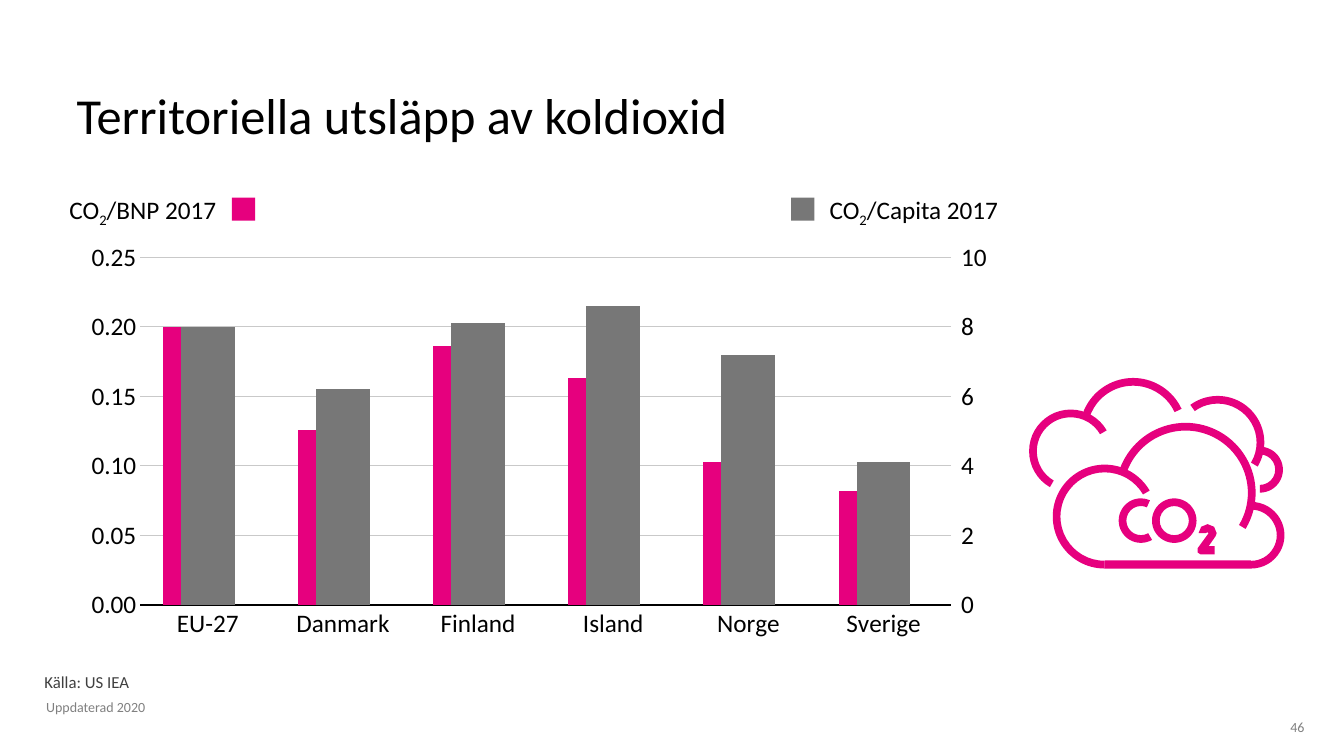
"""Build a slide on territorial carbon dioxide emissions in the Nordic countries."""
import copy

import pptx
import pptx.chart.axis
import pptx.chart.data
import pptx.dml.color
import pptx.enum.chart
import pptx.enum.shapes
import pptx.enum.text
import pptx.oxml
import pptx.oxml.ns
import pptx.util

Pt = pptx.util.Pt
qn = pptx.oxml.ns.qn
ALIGN = pptx.enum.text.PP_ALIGN
ANCHOR = pptx.enum.text.MSO_ANCHOR
SHAPE = pptx.enum.shapes.MSO_SHAPE
TICK = pptx.enum.chart.XL_TICK_MARK

THEME = {
    "font": "Calibri",
    "black": "000000", "dark": "404040", "muted": "808080",
    "pink": "E6007E", "gray": "777777", "grid": "C9C9C9",
    "title": 36, "label": 18, "source": 12, "small": 10,
}

TEXTS = [
    dict(at=(54.7, 26.6, 854.6, 77), runs=["Territoriella utsläpp av koldioxid"], size="title",
         shade="black", spacing=0.85, anchor=ANCHOR.BOTTOM, inset=(0, 0)),
    dict(at=(31.7, 479.5, 350, 16.6), runs=["Källa: US IEA"], size="source",
         shade="dark", anchor=ANCHOR.MIDDLE, inset=(0, 0)),
    dict(at=(903.6, 513.4, 28.1, 14.4), runs=["46"], size="small", shade="muted",
         spacing=1.0, align=ALIGN.RIGHT, inset=(0, 0)),
    dict(at=(42.5, 135.4, 162, 26.6), runs=["CO", "2", "/BNP 2017"], size="label", shade="black"),
    dict(at=(558, 135.4, 162, 26.6), runs=["CO", "2", "/Capita 2017"], size="label",
         shade="black", align=ALIGN.RIGHT),
    dict(at=(25.9, 496.8, 97.2, 18), runs=["Uppdaterad 2020"], size="small", shade="muted"),
]
LEGEND_KEYS = [((165.6, 141.1, 16.6, 16.6), "pink"), ((565.2, 141.1, 16.6, 16.6), "gray")]

CHART_AT = (31.7, 121, 877.7, 353.5)
PLOT_LAYOUT = {"x": 0.078, "y": 0.178, "w": 0.66, "h": 0.702}
COUNTRIES = ["EU-27", "Danmark", "Finland", "Island", "Norge", "Sverige"]
SERIES = [
    ("Series 1", [0.2, 0.126, 0.186, 0.163, 0.103, 0.082], "pink"),
    ("Series 2", [None] * 6, "gray"),
    ("Series 3", [8, 6.2, 8.1, 8.6, 7.2, 4.1], "gray"),
]

STROKE = 5.5
ANGLE_UNIT = 0.6
CLOUD_ARCS = [
    (815, 371.9, 15.9, 60, 294),
    (789.1, 369, 37.1, 90, 330),
    (846.9, 352.1, 50, 198, 31),
    (893.7, 382.3, 23.8, 270, 90),
    (869.8, 316.1, 33.3, 234, 31),
    (900, 335.5, 16.4, 270, 90),
    (764.8, 322.3, 29.7, 120, 330),
    (809.4, 308.2, 38.2, 197, 335),
]
LETTER_O = (838.8, 371.9, 15.9)
CLOUD_BASE = (789.1, 400.3, 104.6, 5.8)
DIGIT_TWO = [(856.1, 380.9), (858, 376.3), (862.6, 374.4), (867.2, 376.3), (869.1, 380.9),
             (868.3, 383), (863.3, 390.2), (867.6, 390.2), (867.6, 396), (857.5, 396),
             (855.4, 394.6), (855.4, 391.7), (863.3, 380.9), (862.6, 380.2), (861.1, 380.9)]


def color(name):
    return pptx.dml.color.RGBColor.from_string(THEME[name])


def points(values):
    return [Pt(value) for value in values]


def set_all(target, values):
    for name, value in values.items():
        setattr(target, name, value)


def style_font(font, size, shade):
    set_all(font, {"name": THEME["font"], "size": Pt(THEME[size])})
    font.color.rgb = color(shade)


def paint(shape, shade):
    shape.shadow.inherit = False
    shape.fill.solid()
    shape.fill.fore_color.rgb = color(shade)
    shape.line.fill.background()


def add_text(page, at, runs, size, shade, spacing=0.9, align=ALIGN.LEFT,
             anchor=ANCHOR.TOP, inset=(7.2, 3.6)):
    frame = page.shapes.add_textbox(*points(at)).text_frame
    side, edge = points(inset)
    set_all(frame, {"word_wrap": True, "vertical_anchor": anchor, "margin_left": side,
                    "margin_right": side, "margin_top": edge, "margin_bottom": edge})
    para = frame.paragraphs[0]
    set_all(para, {"alignment": align, "line_spacing": spacing})
    for index, words in enumerate(runs):
        span = para.add_run()
        span.text = words
        style_font(span.font, size, shade)
        if index == 1:
            span.font._element.set("baseline", "-25000")


def add_ring(group, kind, x, y, radius, angles=()):
    side = 2 * radius
    ring = group.shapes.add_shape(kind, *points((x - radius, y - radius, side, side)))
    settings = [angle * ANGLE_UNIT for angle in angles] + [STROKE / side]
    for index, setting in enumerate(settings):
        ring.adjustments[index] = setting
    paint(ring, "pink")


def add_cloud(page):
    group = page.shapes.add_group_shape()
    for x, y, radius, *angles in CLOUD_ARCS:
        add_ring(group, SHAPE.BLOCK_ARC, x, y, radius, angles)
    add_ring(group, SHAPE.DONUT, *LETTER_O)
    paint(group.shapes.add_shape(SHAPE.RECTANGLE, *points(CLOUD_BASE)), "pink")
    first, *rest = [points(corner) for corner in DIGIT_TWO]
    builder = group.shapes.build_freeform(*first, scale=1.0)
    builder.add_line_segments(rest, close=True)
    paint(builder.convert_to_shape(), "pink")


def style_value_axis(axis, top, step, number_format, tick):
    set_all(axis, {"minimum_scale": 0, "maximum_scale": top, "major_unit": step,
                   "major_tick_mark": tick, "minor_tick_mark": TICK.NONE})
    set_all(axis.tick_labels, {"number_format": number_format, "number_format_is_linked": False})
    style_font(axis.tick_labels.font, "label", "black")
    axis.format.line.fill.background()


def add_right_axis(chart):
    left_bars = chart.plots[0]._element
    right_bars = copy.deepcopy(left_bars)
    for bars, unwanted in ((left_bars, slice(2, None)), (right_bars, slice(0, 2))):
        for series in bars.findall(qn("c:ser"))[unwanted]:
            bars.remove(series)
    left_bars.addnext(right_bars)
    category = copy.deepcopy(chart.category_axis._element)
    value = copy.deepcopy(chart.value_axis._element)
    chart.value_axis._element.addnext(value)
    value.addnext(category)
    for element, own, other in ((category, "5001", "5002"), (value, "5002", "5001")):
        element.find(qn("c:axId")).set("val", own)
        element.find(qn("c:crossAx")).set("val", other)
    for link, number in zip(right_bars.findall(qn("c:axId")), ("5001", "5002")):
        link.set("val", number)
    value.find(qn("c:axPos")).set("val", "r")
    value.find(qn("c:crosses")).set("val", "max")
    pptx.chart.axis.CategoryAxis(category).visible = False
    axis = pptx.chart.axis.ValueAxis(value)
    axis.has_major_gridlines = False
    style_value_axis(axis, 10, 2, "#,##0", TICK.OUTSIDE)


def set_plot_layout(chart):
    area = chart.plots[0]._element.getparent()
    for layout in area.findall(qn("c:layout")):
        area.remove(layout)
    layout = pptx.oxml.parse_xml(
        f'<c:layout {pptx.oxml.ns.nsdecls("c")}><c:manualLayout><c:layoutTarget val="inner"/>'
        '<c:xMode val="edge"/><c:yMode val="edge"/>'
        + "".join(f'<c:{name} val="{value}"/>' for name, value in PLOT_LAYOUT.items())
        + "</c:manualLayout></c:layout>")
    area.insert(0, layout)


def add_emission_chart(page):
    data = pptx.chart.data.CategoryChartData()
    data.categories = COUNTRIES
    for name, values, shade in SERIES:
        data.add_series(name, values)
    kind = pptx.enum.chart.XL_CHART_TYPE.COLUMN_CLUSTERED
    chart = page.shapes.add_chart(kind, *points(CHART_AT), data).chart
    set_all(chart, {"has_legend": False, "has_title": False})
    style_font(chart.font, "small", "black")
    set_all(chart.plots[0], {"gap_width": 151, "overlap": -100, "vary_by_categories": False})
    for series, (name, values, shade) in zip(chart.plots[0].series, SERIES):
        series.format.fill.solid()
        series.format.fill.fore_color.rgb = color(shade)
    axis = chart.category_axis
    set_all(axis, {"major_tick_mark": TICK.NONE, "minor_tick_mark": TICK.NONE})
    style_font(axis.tick_labels.font, "label", "black")
    style_value_axis(chart.value_axis, 0.25, 0.05, "#,##0.00", TICK.NONE)
    grid = chart.value_axis.major_gridlines
    for line, shade, width in ((axis.format.line, "black", 1.5), (grid.format.line, "grid", 0.75)):
        line.color.rgb = color(shade)
        line.width = Pt(width)
    add_right_axis(chart)
    set_plot_layout(chart)


def main():
    deck = pptx.Presentation()
    set_all(deck, {"slide_width": Pt(960), "slide_height": Pt(540)})
    page = deck.slides.add_slide(deck.slide_layouts[6])
    add_emission_chart(page)
    for text in TEXTS:
        add_text(page, **text)
    for at, shade in LEGEND_KEYS:
        paint(page.shapes.add_shape(SHAPE.RECTANGLE, *points(at)), shade)
    add_cloud(page)
    deck.save("out.pptx")


if __name__ == "__main__":
    main()
